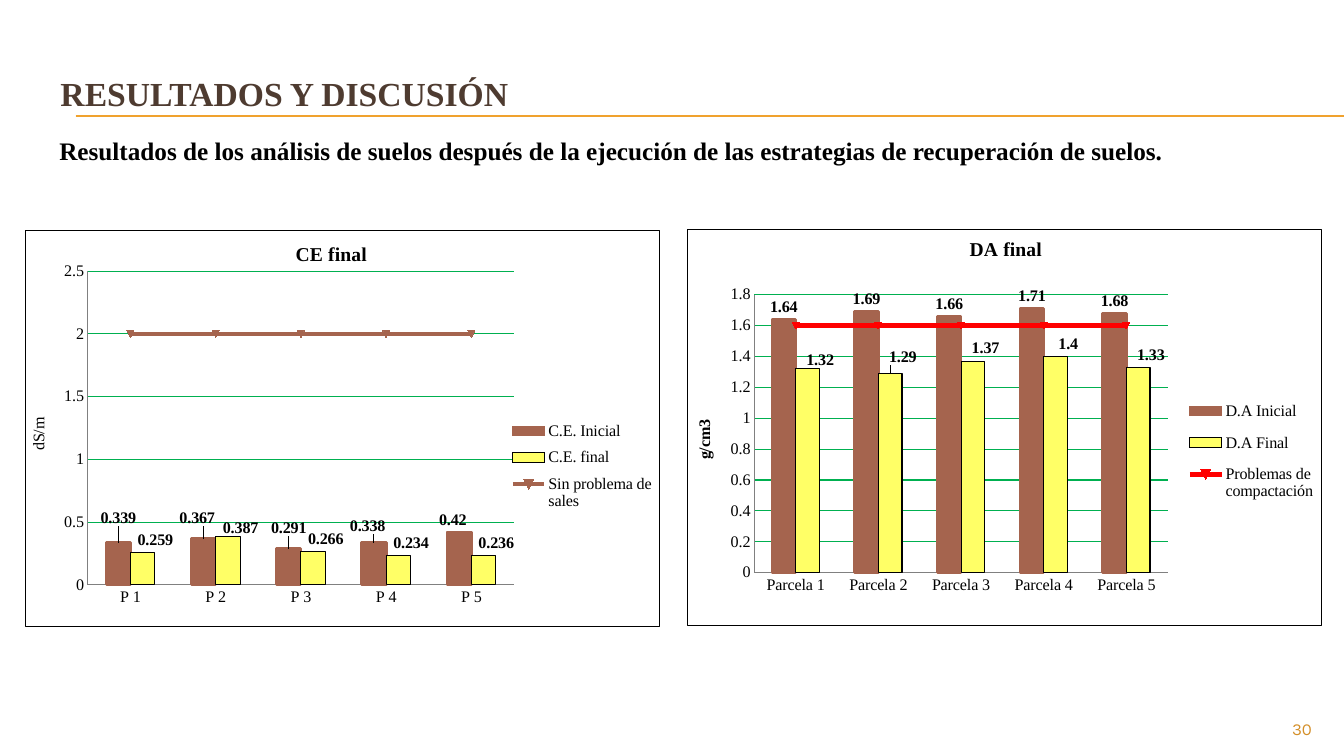
from lxml.etree import SubElement
from pptx import Presentation
from pptx.chart.data import CategoryChartData
from pptx.dml.color import RGBColor
from pptx.enum.chart import XL_CHART_TYPE as CT, XL_LABEL_POSITION as LP
from pptx.enum.chart import XL_LEGEND_POSITION as LEG, XL_TICK_MARK as TM
from pptx.enum.text import MSO_ANCHOR, PP_ALIGN
from pptx.oxml.ns import qn
from pptx.util import Inches, Pt

BLACK = RGBColor(0x00, 0x00, 0x00)
WHITE = RGBColor(0xFF, 0xFF, 0xFF)
BROWN = RGBColor(0x4E, 0x3B, 0x30)
CLAY = RGBColor(0xA5, 0x64, 0x4E)
YELLOW = RGBColor(0xFF, 0xFF, 0x66)
RED = RGBColor(0xFF, 0x00, 0x00)
GREEN = RGBColor(0x00, 0xB0, 0x50)
GREY = RGBColor(0x80, 0x80, 0x80)
GOLD = RGBColor(0xF0, 0xA2, 0x2E)
OCHRE = RGBColor(0xD4, 0x8F, 0x29)
SERIF = "Times New Roman"

CE = {
    "title": "CE final", "unit": "dS/m", "unit_bold": False,
    "cats": [f"P {i}" for i in range(1, 6)],
    "series": {
        "C.E. Inicial": (0.339, 0.367, 0.291, 0.338, 0.42),
        "C.E. final": (0.259, 0.387, 0.266, 0.234, 0.236),
        "Sin problema de sales": (2,) * 5,
    },
    "shifts": [
        [(0, -0.03), (-0.01, -0.02), (0, -0.02), (-0.01, -0.01), (-0.01, 0)],
        [(0.02, 0), (0.02, 0.01), (0.02, 0), (0.02, 0), (0.02, 0)],
    ],
    "scale": {"minimum_scale": 0, "maximum_scale": 2.5, "major_unit": 0.5},
    "limit": CLAY,
    "plot_box": (0.098, 0.103, 0.672, 0.792),
    "legend_box": (0.77, 0.46, 0.23, 0.27),
    "title_at": (0.42, 0.02),
}
DA = {
    "title": "DA final", "unit": "g/cm3", "unit_bold": True,
    "cats": [f"Parcela {i}" for i in range(1, 6)],
    "series": {
        "D.A Inicial": (1.64, 1.69, 1.66, 1.71, 1.68),
        "D.A Final": (1.32, 1.29, 1.37, 1.4, 1.33),
        "Problemas de compactación": (1.6,) * 5,
    },
    "shifts": [
        [],
        [(0.02, 0.01), (0.02, -0.01), (0.02, 0), (0.02, 0), (0.02, 0)],
    ],
    "scale": {"minimum_scale": 0, "maximum_scale": 1.8, "major_unit": 0.2},
    "limit": RED,
    "plot_box": (0.106, 0.165, 0.652, 0.702),
    "legend_box": (0.78, 0.4, 0.22, 0.32),
    "title_at": (0.44, 0.01),
}


def set_font(font, color, **values):
    """Apply a colour and format values to a font."""
    for name, value in {"name": SERIF, "bold": False, **values}.items():
        setattr(font, name, value)
    font.color.rgb = color


def set_line(line, color, width):
    """Give a line its colour and width in points."""
    line.color.rgb = color
    line.width = Pt(width)


def write(tf, text, color, align=PP_ALIGN.LEFT, **values):
    """Write one formatted paragraph into a text frame."""
    tf.word_wrap = True
    p = tf.paragraphs[0]
    p.alignment = align
    r = p.add_run()
    r.text = text
    set_font(r.font, color, **values)


def set_layout(parent, index, box, inner=False, edge=True):
    """Place a chart element by fractions of the chart area."""
    for old in parent.findall(qn("c:layout")):
        parent.remove(old)
    layout = SubElement(parent, qn("c:layout"))
    parent.insert(index, layout)
    manual = SubElement(layout, qn("c:manualLayout"))
    if inner:
        SubElement(manual, qn("c:layoutTarget"), val="inner")
    if edge:
        for tag in ("c:xMode", "c:yMode"):
            SubElement(manual, qn(tag), val="edge")
    for tag, value in zip("xywh", box):
        SubElement(manual, qn(f"c:{tag}"), val=str(value))


def split_limit(chart):
    """Move the last column series into a line plot on the same axes."""
    bar = next(chart.element.iter(qn("c:barChart")))
    line = SubElement(bar.getparent(), qn("c:lineChart"))
    bar.addnext(line)
    SubElement(line, qn("c:grouping"), val="standard")
    SubElement(line, qn("c:varyColors"), val="0")
    ser = bar.findall(qn("c:ser"))[-1]
    for flag in ser.findall(qn("c:invertIfNegative")):
        ser.remove(flag)
    line.append(ser)
    SubElement(line, qn("c:marker"), val="1")
    for axis in bar.findall(qn("c:axId")):
        SubElement(line, qn("c:axId"), val=axis.get("val"))


def add_border(chart):
    """Draw a white chart area with a thin black outline."""
    sp_pr = SubElement(chart.element, qn("c:spPr"))
    chart.element.find(qn("c:chart")).addnext(sp_pr)
    fill = SubElement(sp_pr, qn("a:solidFill"))
    SubElement(fill, qn("a:srgbClr"), val=str(WHITE))
    ln = SubElement(sp_pr, qn("a:ln"), w=str(Pt(0.75)))
    fill = SubElement(ln, qn("a:solidFill"))
    SubElement(fill, qn("a:srgbClr"), val=str(BLACK))


def format_columns(plot, shifts):
    """Colour the columns and place their value labels."""
    for name, value in {"gap_width": 150, "overlap": 0, "vary_by_categories": False}.items():
        setattr(plot, name, value)
    styles = [(CLAY, CLAY, 2), (YELLOW, BLACK, 0.75)]
    for s, (fill, edge, width), moves in zip(plot.series, styles, shifts):
        s.invert_if_negative = False
        s.format.fill.solid()
        s.format.fill.fore_color.rgb = fill
        set_line(s.format.line, edge, width)
        labels = s.data_labels
        labels.show_value = True
        labels.position = LP.OUTSIDE_END
        set_font(labels.font, BLACK, size=Pt(11.5), bold=True)
        for i, move in enumerate(moves):
            label = s.points[i].data_label
            set_font(label.font, BLACK, size=Pt(11.5), bold=True)
            label.position = LP.OUTSIDE_END
        for item, move in zip(labels._element.findall(qn("c:dLbl")), moves):
            set_layout(item, 1, move, edge=False)


def format_limit(s, color):
    """Style the threshold line and its markers."""
    s.smooth = False
    set_line(s.format.line, color, 3)
    s.marker.size = 5
    s.marker.format.fill.solid()
    s.marker.format.fill.fore_color.rgb = color
    set_line(s.marker.format.line, color, 0.75)


def format_axes(chart, data):
    """Format both axes, the gridlines and the unit title."""
    for axis in (chart.category_axis, chart.value_axis):
        axis.major_tick_mark = axis.minor_tick_mark = TM.NONE
        set_line(axis.format.line, GREY, 0.75)
        set_font(axis.tick_labels.font, BLACK, size=Pt(11.5))
    axis = chart.value_axis
    for name, value in data["scale"].items():
        setattr(axis, name, value)
    set_line(axis.major_gridlines.format.line, GREEN, 0.75)
    write(axis.axis_title.text_frame, data["unit"], BLACK, PP_ALIGN.CENTER,
          size=Pt(11.5), bold=data["unit_bold"])


def add_result_chart(slide, data, x, y, w, h):
    """Add a column chart with a threshold line in the given box."""
    cd = CategoryChartData()
    cd.categories = data["cats"]
    for name, values in data["series"].items():
        cd.add_series(name, values)
    chart = slide.shapes.add_chart(
        CT.COLUMN_CLUSTERED, Inches(x), Inches(y), Inches(w), Inches(h), cd).chart
    set_font(chart.font, BLACK, size=Pt(11.5))
    add_border(chart)
    split_limit(chart)
    columns, limit = chart.plots
    format_columns(columns, data["shifts"])
    format_limit(limit.series[0], data["limit"])
    format_axes(chart, data)
    write(chart.chart_title.text_frame, data["title"], BLACK, PP_ALIGN.CENTER,
          size=Pt(14), bold=True)
    chart.has_legend = True
    chart.legend.position = LEG.RIGHT
    chart.legend.include_in_layout = False
    set_font(chart.legend.font, BLACK, size=Pt(11.5))
    root = chart.element.find(qn("c:chart"))
    set_layout(root.find(qn("c:title")), 1, data["title_at"])
    set_layout(root.find(qn("c:plotArea")), 0, data["plot_box"], inner=True)
    set_layout(root.find(qn("c:legend")), 1, data["legend_box"])


def add_text(slide, text, color, x, y, w, h, **values):
    """Add a text box with one paragraph."""
    sp = slide.shapes.add_textbox(Inches(x), Inches(y), Inches(w), Inches(h))
    write(sp.text_frame, text, color, **values)


def add_header(slide, x, y, w, h):
    """Place the title and the double rule below it."""
    for rule_y in (y + 0.69, y + 0.7):
        rule = slide.shapes.add_connector(
            1, Inches(x + 0.25), Inches(rule_y), Inches(13.33), Inches(rule_y))
        set_line(rule.line, GOLD, 0.75)
        SubElement(rule._element.spPr, qn("a:effectLst"))
    sp = slide.shapes.title
    for name, value in zip(("left", "top", "width", "height"), (x, y, w, h)):
        setattr(sp, name, Inches(value))
    sp.text_frame.vertical_anchor = MSO_ANCHOR.MIDDLE
    write(sp.text_frame, "RESULTADOS Y DISCUSIÓN", BROWN, size=Pt(24), bold=True)


def main():
    """Build the slide and save it."""
    prs = Presentation()
    prs.slide_width, prs.slide_height = Inches(13.33), Inches(7.5)
    slide = prs.slides.add_slide(prs.slide_layouts[5])
    add_header(slide, 0.5, 0.46, 4.97, 0.92)
    add_text(slide, "30", OCHRE, 12, 7.08, 1.11, 0.27,
             align=PP_ALIGN.RIGHT, name="Karla", size=Pt(12))
    add_result_chart(slide, CE, 0.25, 2.28, 6.3, 3.94)
    add_result_chart(slide, DA, 6.81, 2.27, 6.3, 3.94)
    add_text(slide, "Resultados de los análisis de suelos después de la ejecución "
             "de las estrategias de recuperación de suelos.", BLACK,
             0.49, 1.29, 11.84, 0.71, size=Pt(18), bold=True)
    prs.save("out.pptx")


if __name__ == "__main__":
    main()
